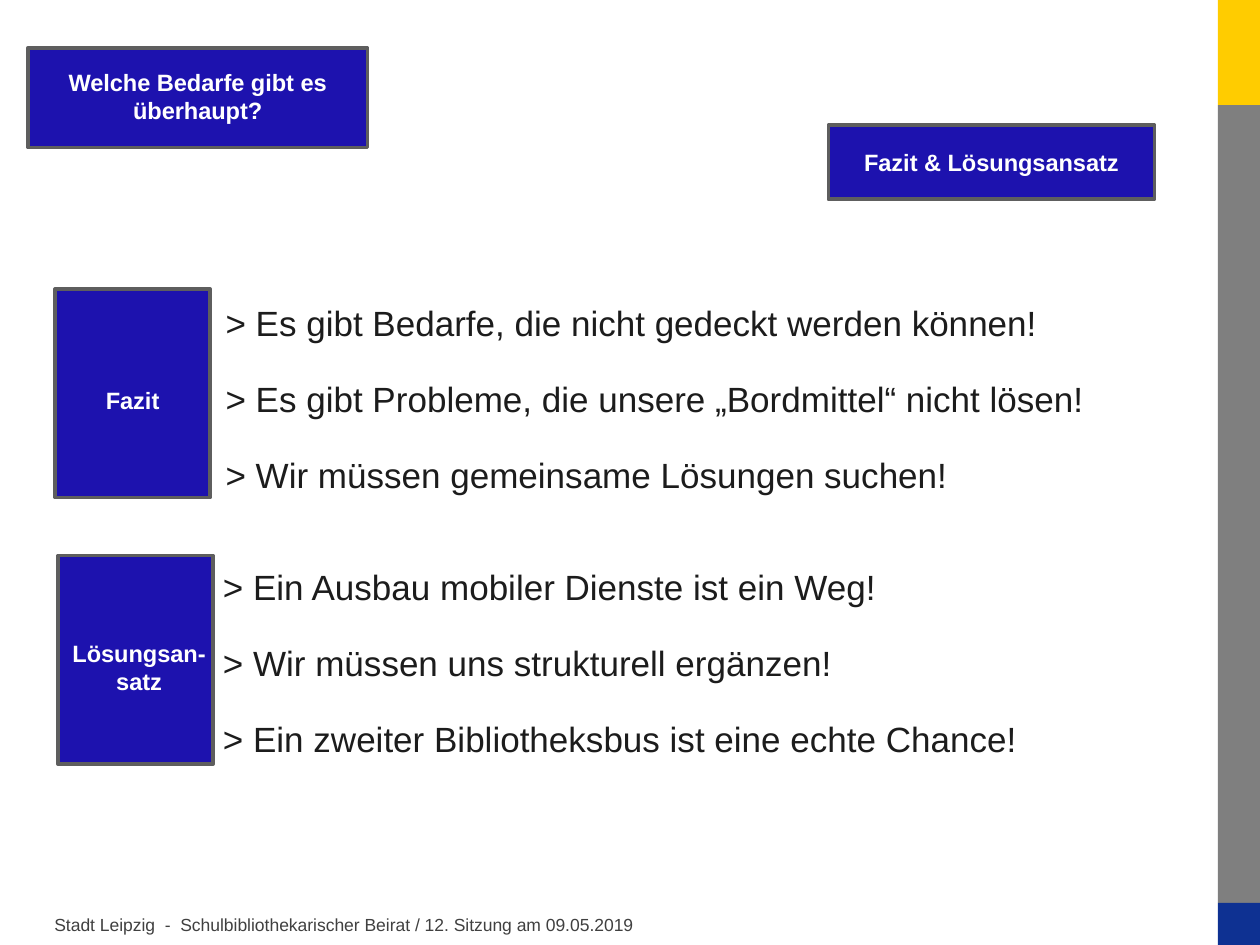
from pptx import Presentation
from pptx.dml.color import RGBColor
from pptx.enum.shapes import MSO_SHAPE
from pptx.enum.text import MSO_ANCHOR, MSO_AUTO_SIZE, PP_ALIGN
from pptx.oxml.ns import qn
from pptx.util import Pt

COLORS = {
    "yellow": "FFCC00", "grey": "7F7F7F", "navy": "0E3192",
    "box": "1D12AE", "border": "5E5E5E", "white": "FFFFFF",
    "body": "1C1C1C", "footer": "404040",
}


def write(shape, *lines, size=13.5, color="white", bold=False, align=PP_ALIGN.LEFT,
          anchor=MSO_ANCHOR.MIDDLE, insets=(7.2, 3.6, 7.2, 3.6), gap=0):
    frame = shape.text_frame
    frame.word_wrap = True
    frame.auto_size = MSO_AUTO_SIZE.NONE
    frame.vertical_anchor = anchor
    frame.margin_left, frame.margin_top, frame.margin_right, frame.margin_bottom = map(Pt, insets)
    frame.text = "\n".join(lines)
    for number, paragraph in enumerate(frame.paragraphs):
        properties = paragraph._p.get_or_add_pPr()
        properties.set("marL", "0")
        properties.set("indent", "0")
        properties.append(properties.makeelement(qn("a:buNone"), {}))
        paragraph.alignment = align
        paragraph.line_spacing = 1.0
        paragraph.space_before = Pt(gap if number else 0)
        paragraph.space_after = Pt(0)
        paragraph.font.name = "Arial"
        paragraph.font.size = Pt(size)
        paragraph.font.bold = bold
        paragraph.font.color.rgb = RGBColor.from_string(COLORS[color])


def paint(shape, fill, border=None):
    shape.fill.solid()
    shape.fill.fore_color.rgb = RGBColor.from_string(COLORS[fill])
    if border:
        shape.line.color.rgb = RGBColor.from_string(COLORS[border])
        shape.line.width = Pt(2)
    else:
        shape.line.fill.background()


deck = Presentation()
deck.slide_width, deck.slide_height = Pt(720), Pt(540)
slide = deck.slides.add_slide(deck.slide_layouts[3])
title, findings, solutions = slide.placeholders

for top, height, color in [(60, 456, "grey"), (516, 24, "navy"), (0, 60, "yellow")]:
    stripe = slide.shapes.add_shape(MSO_SHAPE.RECTANGLE, Pt(696), Pt(top), Pt(24), Pt(height))
    stripe.shadow.inherit = False
    paint(stripe, color)

for left, width, text in [
    (24, 86, "Stadt Leipzig  -"),
    (96, 468, "Schulbibliothekarischer Beirat / 12. Sitzung am 09.05.2019"),
]:
    footer = slide.shapes.add_textbox(Pt(left), Pt(516), Pt(width), Pt(24))
    write(footer, text, size=10, color="footer")

title.left, title.top, title.width, title.height = Pt(16), Pt(27.3), Pt(194), Pt(57)
paint(title, "box", "border")
write(title, "Welche Bedarfe gibt es überhaupt?", bold=True, align=PP_ALIGN.CENTER,
      insets=(7.2, 2, 7.2, 4))

for left, top, width, height, label, insets in [
    (473.3, 71.5, 186.5, 42.4, "Fazit & Lösungsansatz", (7.2, 3.6, 7.2, 3.6)),
    (31.5, 165.2, 88.6, 119.2, "Fazit", (7.2, 8, 7.2, 0)),
    (33.2, 317.5, 88.6, 119.2, "Lösungsan-satz", (6, 8, 2, 0)),
]:
    heading = slide.shapes.add_shape(MSO_SHAPE.RECTANGLE, Pt(left), Pt(top), Pt(width), Pt(height))
    heading.shadow.inherit = False
    paint(heading, "box", "border")
    write(heading, label, bold=True, align=PP_ALIGN.CENTER, insets=insets)

for points, left, top, lines in [
    (findings, 121.7, 168.5, [
        "> Es gibt Bedarfe, die nicht gedeckt werden können!",
        "> Es gibt Probleme, die unsere „Bordmittel“ nicht lösen!",
        "> Wir müssen gemeinsame Lösungen suchen!",
    ]),
    (solutions, 120.2, 319.5, [
        "> Ein Ausbau mobiler Dienste ist ein Weg!",
        "> Wir müssen uns strukturell ergänzen!",
        "> Ein zweiter Bibliotheksbus ist eine echte Chance!",
    ]),
]:
    points.left, points.top, points.width, points.height = Pt(left), Pt(top), Pt(518), Pt(117)
    write(points, *lines, size=20, color="body", anchor=MSO_ANCHOR.TOP, gap=19.5)

deck.save("out.pptx")
